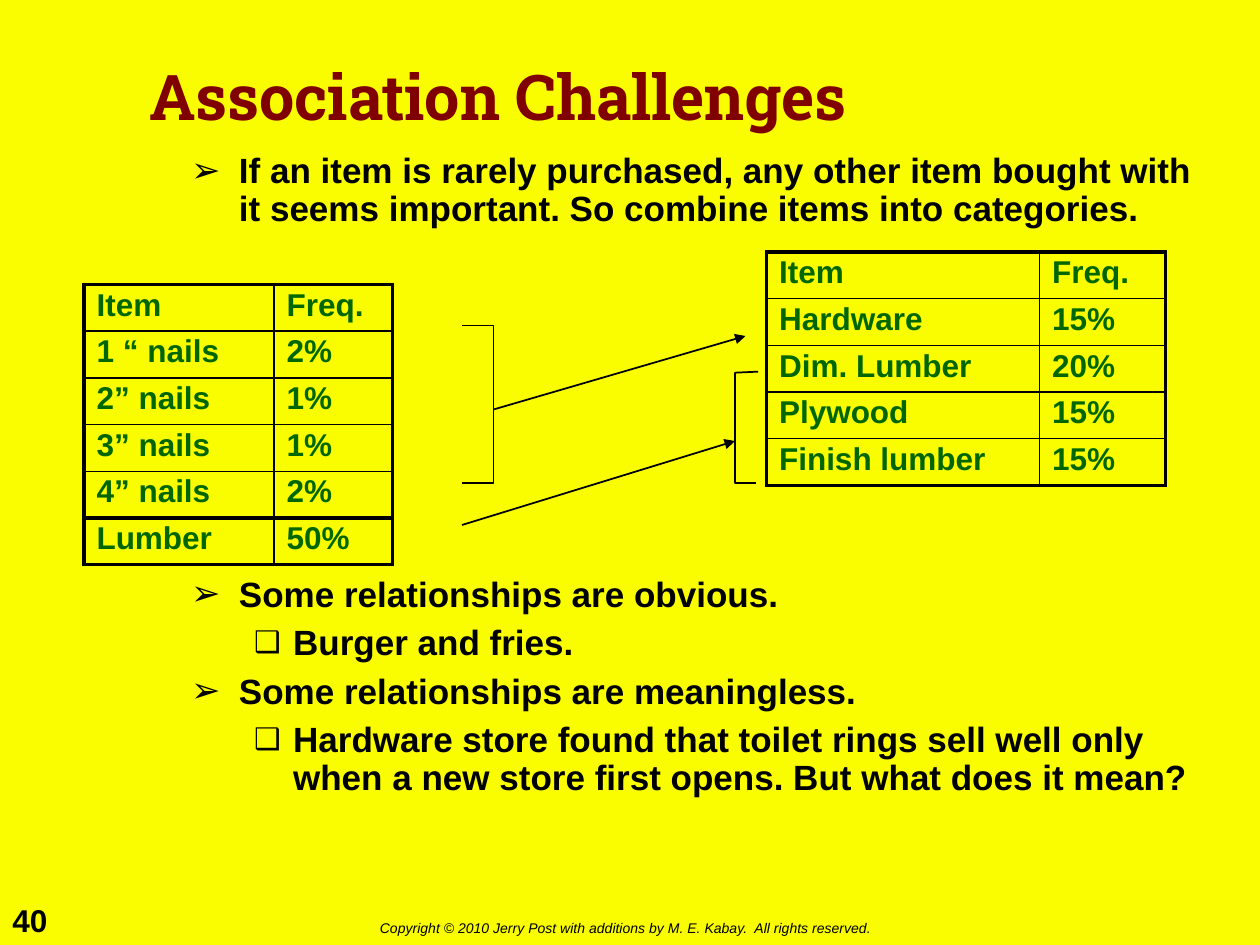
from lxml import etree
from pptx import Presentation
from pptx import util as u
from pptx.dml.color import RGBColor
from pptx.enum import shapes, text
from pptx.oxml.ns import qn

BLACK = RGBColor(0x00, 0x00, 0x00)
YELLOW = RGBColor(0xFA, 0xFD, 0x00)
MAROON = RGBColor(0x80, 0x00, 0x00)
GREEN = RGBColor(0x00, 0x66, 0x00)
THIN, THICK = 1, 2.25
GRID = u.Inches(1) / 12
ROW = 4.22

TITLE = "Association Challenges"
BULLETS = [
    (0, 0, "If an item is rarely purchased, any other item bought with it seems "
           "important. So combine items into categories."),
    (0, 199, "Some relationships are obvious."),
    (1, 6, "Burger and fries."),
    (0, 6, "Some relationships are meaningless."),
    (1, 6, "Hardware store found that toilet rings sell well only when a new store "
           "first opens. But what does it mean?"),
]
LEVELS = [("➢", 100, 0.38, 0.38), ("❑", 85, 0.81, 0.31)]
TABLES = [
    dict(left=8, top=27.1, columns=(18.1, 11.3), heavy_rows={0, 5, 6},
         rows=[("Item", "Freq."), ("1 “ nails", "2%"), ("2” nails", "1%"),
               ("3” nails", "1%"), ("4” nails", "2%"), ("Lumber", "50%")]),
    dict(left=73, top=24, columns=(26, 12), heavy_rows={0, 5},
         rows=[("Item", "Freq."), ("Hardware", "15%"), ("Dim. Lumber", "20%"),
               ("Plywood", "15%"), ("Finish lumber", "15%")]),
]
ARROWS = [((47, 39), (71, 32)), ((44, 50), (70, 42))]
BRACKETS = [
    [(44, 31), (47, 31), (47, 46), (44, 46)],
    [(72.2, 35.4), (70, 35.5), (70, 46), (72, 46)],
]
FOOTERS = [
    ("40", (0, 85.2, 6.1, 4.8), dict(size=18, bold=True)),
    ("Copyright © 2010 Jerry Post with additions by M. E. Kabay.  All rights reserved.",
     (35, 87, 50.6, 2.9), dict(size=8, italic=True)),
]


def grid(*values):
    return [u.Emu(round(value * GRID)) for value in values]


def set_font(paragraph, size, color=BLACK, name="Arial", bold=False, italic=False):
    font = paragraph.font
    font.size, font.name, font.bold, font.italic = u.Pt(size), name, bold, italic
    font.color.rgb = color


def place(shape, box):
    shape.left, shape.top, shape.width, shape.height = grid(*box)
    shape.text_frame.auto_size = text.MSO_AUTO_SIZE.NONE


def add_bullet(paragraph, level):
    symbol, size, margin, hanging = LEVELS[level]
    properties = paragraph._p.get_or_add_pPr()
    properties.set("marL", str(u.Inches(margin)))
    properties.set("indent", str(-u.Inches(hanging)))
    color = etree.SubElement(properties, qn("a:buClr"))
    etree.SubElement(color, qn("a:srgbClr"), val=str(BLACK))
    etree.SubElement(properties, qn("a:buSzPct"), val=str(size * 1000))
    etree.SubElement(properties, qn("a:buFont"), typeface="Arial")
    etree.SubElement(properties, qn("a:buChar"), char=symbol)


def set_borders(cell, widths):
    properties = cell._tc.get_or_add_tcPr()
    for index, (side, width) in enumerate(zip("LRTB", widths)):
        line = etree.Element(qn(f"a:ln{side}"), w=str(u.Pt(width)))
        fill = etree.SubElement(line, qn("a:solidFill"))
        etree.SubElement(fill, qn("a:srgbClr"), val=str(BLACK))
        properties.insert(index, line)


def add_frequency_table(slide, left, top, columns, heavy_rows, rows):
    box = grid(left, top, sum(columns), ROW * len(rows))
    table = slide.shapes.add_table(len(rows), len(columns), *box).table
    table.first_row = table.horz_banding = False
    for column, width in zip(table.columns, grid(*columns)):
        column.width = width
    for r, values in enumerate(rows):
        table.rows[r].height = grid(ROW)[0]
        for c, value in enumerate(values):
            cell = table.cell(r, c)
            cell.text = value
            cell.fill.background()
            paragraph = cell.text_frame.paragraphs[0]
            paragraph.line_spacing = 0.9
            set_font(paragraph, 18, GREEN, bold=True)
            heavy = (c == 0, c == len(columns) - 1, r in heavy_rows, r + 1 in heavy_rows)
            set_borders(cell, [THICK if edge else THIN for edge in heavy])


def add_arrow(slide, start, end):
    arrow = slide.shapes.add_connector(
        shapes.MSO_CONNECTOR.STRAIGHT, *grid(*start, *end))
    arrow.line.color.rgb, arrow.line.width = BLACK, u.Pt(THIN)
    etree.SubElement(arrow.line._get_or_add_ln(), qn("a:tailEnd"), type="triangle")
    etree.SubElement(arrow._element.spPr, qn("a:effectLst"))


def add_bracket(slide, points):
    start, *others = [grid(*point) for point in points]
    builder = slide.shapes.build_freeform(*start)
    builder.add_line_segments(others, close=False)
    bracket = builder.convert_to_shape()
    bracket.shadow.inherit = False
    bracket.fill.background()
    bracket.line.color.rgb, bracket.line.width = BLACK, u.Pt(THIN)


def main():
    presentation = Presentation()
    presentation.slide_width, presentation.slide_height = grid(120, 90)
    slide = presentation.slides.add_slide(presentation.slide_layouts[1])
    slide.background.fill.solid()
    slide.background.fill.fore_color.rgb = YELLOW

    for value, box, style in FOOTERS:
        footer = slide.shapes.add_textbox(*grid(*box))
        footer.text_frame.word_wrap = False
        footer.text_frame.text = value
        set_font(footer.text_frame.paragraphs[0], **style)

    title, body = slide.placeholders
    place(title, (13, 2, 94, 15))
    title.text_frame.text = TITLE
    title.text_frame.vertical_anchor = text.MSO_ANCHOR.MIDDLE
    heading = title.text_frame.paragraphs[0]
    heading.alignment = text.PP_ALIGN.LEFT
    heading.line_spacing = 0.9
    set_font(heading, 36, MAROON, "Roboto Slab", bold=True)

    place(body, (17, 14, 99, 66))
    body.text_frame.text = "\n".join(value for _, _, value in BULLETS)
    for paragraph, (level, space, _) in zip(body.text_frame.paragraphs, BULLETS):
        paragraph.level = level
        add_bullet(paragraph, level)
        paragraph.line_spacing = 0.9
        paragraph.space_before = u.Pt(space)
        set_font(paragraph, 20, bold=True)

    for table in TABLES:
        add_frequency_table(slide, **table)
    for start, end in ARROWS:
        add_arrow(slide, start, end)
    for points in BRACKETS:
        add_bracket(slide, points)
    presentation.save("out.pptx")


if __name__ == "__main__":
    main()
